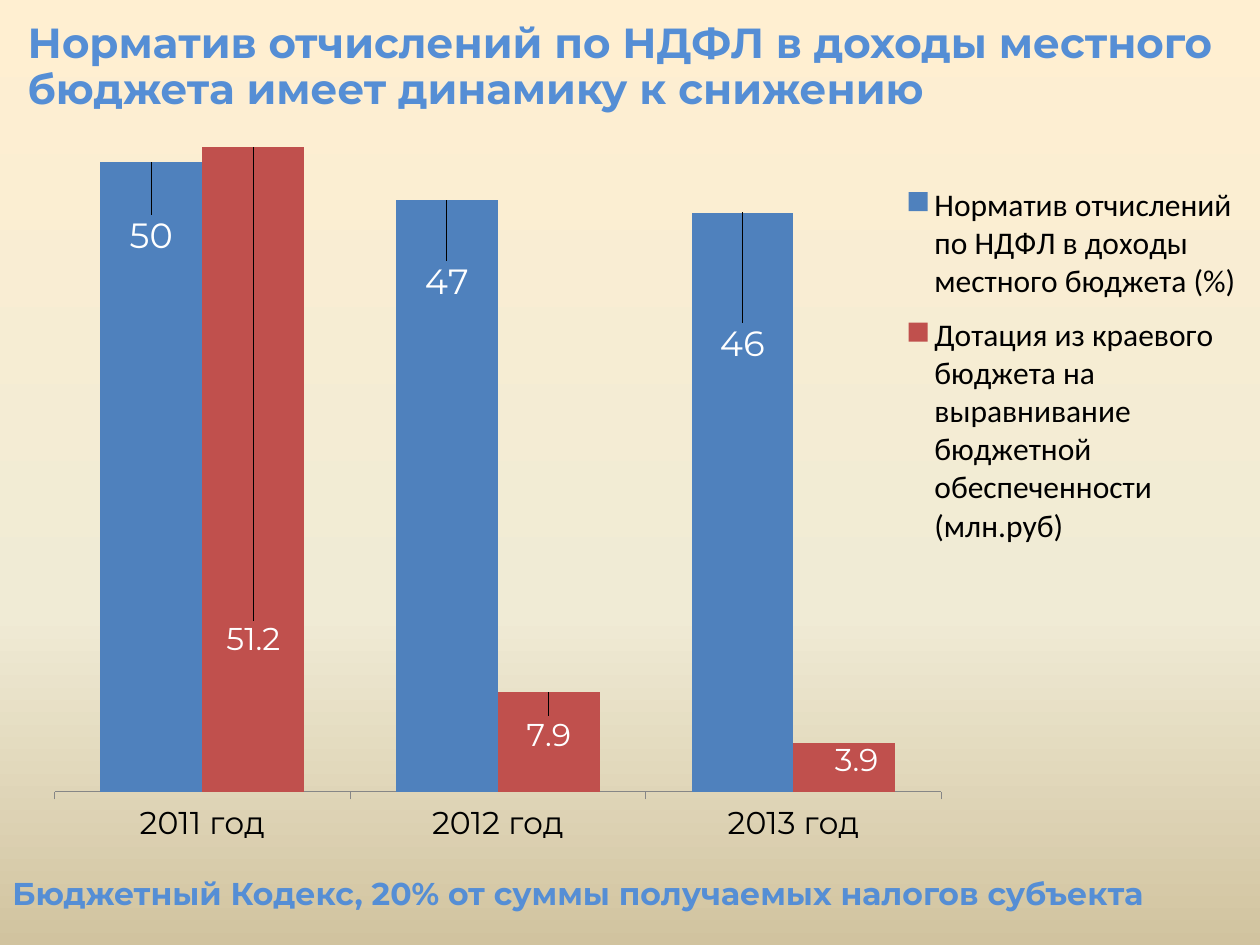
"""Build the slide on income tax deductions to the local budget."""
from copy import deepcopy

from lxml.etree import SubElement
from pptx import Presentation
from pptx.chart.data import CategoryChartData
from pptx.dml.color import RGBColor
from pptx.enum.chart import XL_CHART_TYPE as ChartType
from pptx.enum.chart import XL_LABEL_POSITION as LabelPos
from pptx.enum.chart import XL_LEGEND_POSITION as LegendPos
from pptx.enum.chart import XL_TICK_MARK as Tick
from pptx.enum.text import MSO_ANCHOR, PP_ALIGN
from pptx.oxml.ns import qn
from pptx.util import Inches, Pt

TITLE = "Норматив отчислений по НДФЛ в доходы местного бюджета имеет динамику к снижению"
NOTE = "Бюджетный Кодекс, 20% от суммы получаемых налогов субъекта"
HEADING = RGBColor(0x55, 0x8E, 0xD5)
BLUE = RGBColor(0x4F, 0x81, 0xBD)
RED = RGBColor(0xC0, 0x50, 0x4D)
WHITE = RGBColor(0xFF, 0xFF, 0xFF)
BLACK = RGBColor(0, 0, 0)
GRAY = RGBColor(0x86, 0x86, 0x86)
BACKGROUND = [
    (0, RGBColor(0xFF, 0xEF, 0xD1)),
    (0.65, RGBColor(0xF0, 0xEB, 0xD5)),
    (1, RGBColor(0xD1, 0xC3, 0x9F)),
]
YEARS = ["2011 год", "2012 год", "2013 год"]
SERIES = [
    dict(name="Норматив отчислений по НДФЛ в доходы местного бюджета (%)",
         values=[50, 47, 46], color=BLUE, size=20,
         shifts=[(0, 0.12), (0, 0.13), (0, 0.19)]),
    dict(name="Дотация из краевого бюджета на выравнивание бюджетной обеспеченности (млн.руб)",
         values=[51.2, 7.9, 3.9], color=RED, size=18,
         shifts=[(0, 0.62), (0, 0.08), (0.01, 0.05)]),
]


def set_font(font, size, color, name="Montserrat", bold=False):
    font.size, font.name, font.bold = Pt(size), name, bold
    font.color.rgb = color


def write_heading(sp, text, box, size, spacing=1.0):
    sp.left, sp.top, sp.width, sp.height = map(Inches, box)
    tf = sp.text_frame
    tf.word_wrap = True
    tf.vertical_anchor = MSO_ANCHOR.TOP
    p = tf.paragraphs[0]
    p.alignment, p.line_spacing = PP_ALIGN.LEFT, spacing
    r = p.add_run()
    r.text = text
    set_font(r.font, size, HEADING, bold=True)


def place(parent, index, **settings):
    for old in parent.findall(qn("c:layout")):
        parent.remove(old)
    layout = SubElement(parent, qn("c:layout"))
    manual = SubElement(layout, qn("c:manualLayout"))
    for tag, value in settings.items():
        SubElement(manual, qn(f"c:{tag}")).set("val", str(value))
    parent.insert(index, layout)


def paint_background(slide):
    fill = slide.background.fill
    fill.gradient()
    fill.gradient_angle = 270
    stops = next(slide.element.iter(qn("a:gsLst")))
    stops.append(deepcopy(stops[0]))
    for stop, (position, color) in zip(fill.gradient_stops, BACKGROUND):
        stop.position = position
        stop.color.rgb = color


def add_budget_chart(slide):
    data = CategoryChartData()
    data.categories = YEARS
    for item in SERIES:
        data.add_series(item["name"], item["values"])
    box = map(Inches, (0.2, 0.29, 9.72, 6.61))
    chart = slide.shapes.add_chart(ChartType.COLUMN_CLUSTERED, *box, data).chart
    set_font(chart.font, 18, BLACK, "Calibri")
    chart.has_title = False

    axis = chart.category_axis
    axis.major_tick_mark = Tick.OUTSIDE
    axis.format.line.color.rgb = GRAY
    set_font(axis.tick_labels.font, 18, BLACK)
    values = chart.value_axis
    values.minimum_scale, values.maximum_scale = 0, 60
    values.has_major_gridlines = values.visible = False

    plot = chart.plots[0]
    plot.gap_width, plot.overlap, plot.vary_by_categories = 90, 0, False
    for series, item in zip(plot.series, SERIES):
        series.format.fill.solid()
        series.format.fill.fore_color.rgb = item["color"]
        for i in range(len(YEARS)):
            label = series.points[i].data_label
            set_font(label.font, item["size"], WHITE)
            label.position = LabelPos.OUTSIDE_END
    shifts = [shift for item in SERIES for shift in item["shifts"]]
    for label, (x, y) in zip(chart.element.iter(qn("c:dLbl")), shifts):
        place(label, 1, x=x, y=y)

    chart.has_legend = True
    legend = chart.legend
    legend.position = LegendPos.RIGHT
    legend.include_in_layout = False
    set_font(legend.font, 18, BLACK, "Calibri")
    place(next(chart.element.iter(qn("c:legend"))), 1,
          xMode="edge", yMode="edge", x=0.72, y=0.16, w=0.28, h=0.47)
    place(next(chart.element.iter(qn("c:plotArea"))), 0, layoutTarget="inner",
          xMode="edge", yMode="edge", x=0.024, y=0, w=0.724, h=0.907)


def main():
    prs = Presentation()
    prs.slide_width, prs.slide_height = Inches(10), Inches(7.5)
    slide = prs.slides.add_slide(prs.slide_layouts[5])
    paint_background(slide)
    write_heading(slide.shapes.title, TITLE, (0.12, 0.13, 9.8, 0.83), 24, 0.9)
    note = slide.shapes.add_textbox(0, 0, 0, 0)
    write_heading(note, NOTE, (0, 6.89, 10, 0.4), 18)
    add_budget_chart(slide)
    prs.save("out.pptx")


if __name__ == "__main__":
    main()
